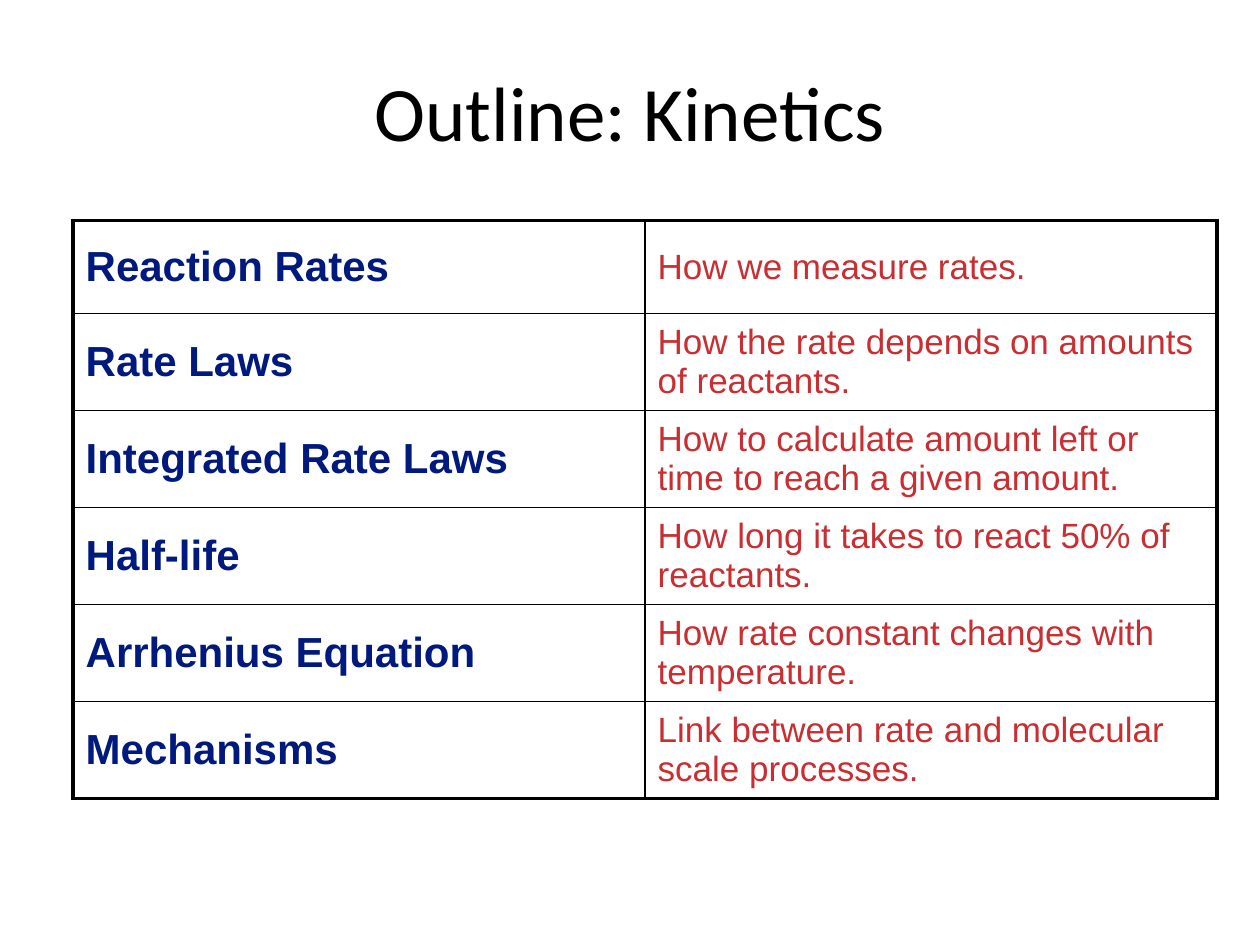
from lxml import etree
from pptx import Presentation
from pptx.dml.color import RGBColor
from pptx.enum.text import MSO_ANCHOR, PP_ALIGN
from pptx.oxml.ns import qn
from pptx.util import Inches, Pt

MIDDLE = MSO_ANCHOR.MIDDLE
LEFT, CENTER = PP_ALIGN.LEFT, PP_ALIGN.CENTER

BLACK = RGBColor(0x00, 0x00, 0x00)
NAVY = RGBColor(0x00, 0x19, 0x7D)
RED = RGBColor(0xC8, 0x2E, 0x32)
WHITE = RGBColor(0xFF, 0xFF, 0xFF)

OUTER_BORDER, INNER_BORDER = Pt(2.25), Pt(1)
FIRST_ROW_HEIGHT, ROW_HEIGHT = Inches(0.74), Inches(0.77)

TOPICS = [
    ("Reaction Rates", "How we measure rates."),
    ("Rate Laws", "How the rate depends on amounts of reactants."),
    ("Integrated Rate Laws", "How to calculate amount left or time to reach a given amount."),
    ("Half-life", "How long it takes to react 50% of reactants."),
    ("Arrhenius Equation", "How rate constant changes with temperature."),
    ("Mechanisms", "Link between rate and molecular scale processes."),
]


def write_text(text_frame, text, *, size, color, font="Arial", bold=False, align=LEFT):
    text_frame.word_wrap = True
    paragraph = text_frame.paragraphs[0]
    paragraph.alignment = align
    run = paragraph.add_run()
    run.text = text
    run.font.name = font
    run.font.size = Pt(size)
    run.font.bold = bold
    run.font.color.rgb = color


def set_borders(cell, widths):
    """Draw black borders; widths are in the order left, right, top, bottom."""
    properties = cell._tc.get_or_add_tcPr()
    for index, (side, width) in enumerate(zip("LRTB", widths)):
        line = etree.Element(qn(f"a:ln{side}"), w=str(width))
        fill = etree.SubElement(line, qn("a:solidFill"))
        etree.SubElement(fill, qn("a:srgbClr"), val=str(BLACK))
        properties.insert(index, line)


def add_title(slide, text, left, top, width, height):
    title = slide.shapes.add_textbox(left, top, width, height)
    title.text_frame.vertical_anchor = MIDDLE
    write_text(title.text_frame, text, size=44, color=BLACK, font="Calibri", align=CENTER)


def add_topic_table(slide, topics, left, top, width):
    height = FIRST_ROW_HEIGHT + ROW_HEIGHT * (len(topics) - 1)
    table = slide.shapes.add_table(len(topics), 2, left, top, width, height).table
    table.first_row = table.horz_banding = False
    for row_index, topic in enumerate(topics):
        is_first, is_last = row_index == 0, row_index == len(topics) - 1
        table.rows[row_index].height = FIRST_ROW_HEIGHT if is_first else ROW_HEIGHT
        for column_index, text in enumerate(topic):
            cell = table.cell(row_index, column_index)
            cell.vertical_anchor = MIDDLE
            cell.fill.solid()
            cell.fill.fore_color.rgb = WHITE
            is_name = column_index == 0
            write_text(cell.text_frame, text, size=24 if is_name else 20,
                       color=NAVY if is_name else RED, bold=is_name)
            on_edge = (is_name, not is_name, is_first, is_last)
            set_borders(cell, [OUTER_BORDER if edge else INNER_BORDER for edge in on_edge])


def main():
    presentation = Presentation()
    presentation.slide_width, presentation.slide_height = Inches(10), Inches(7.5)
    slide = presentation.slides.add_slide(presentation.slide_layouts[6])
    add_title(slide, "Outline: Kinetics", Inches(0), Inches(0.25), Inches(10), Inches(1.25))
    add_topic_table(slide, TOPICS, Inches(0.58), Inches(1.75), Inches(9.08))
    presentation.save("out.pptx")


if __name__ == "__main__":
    main()
